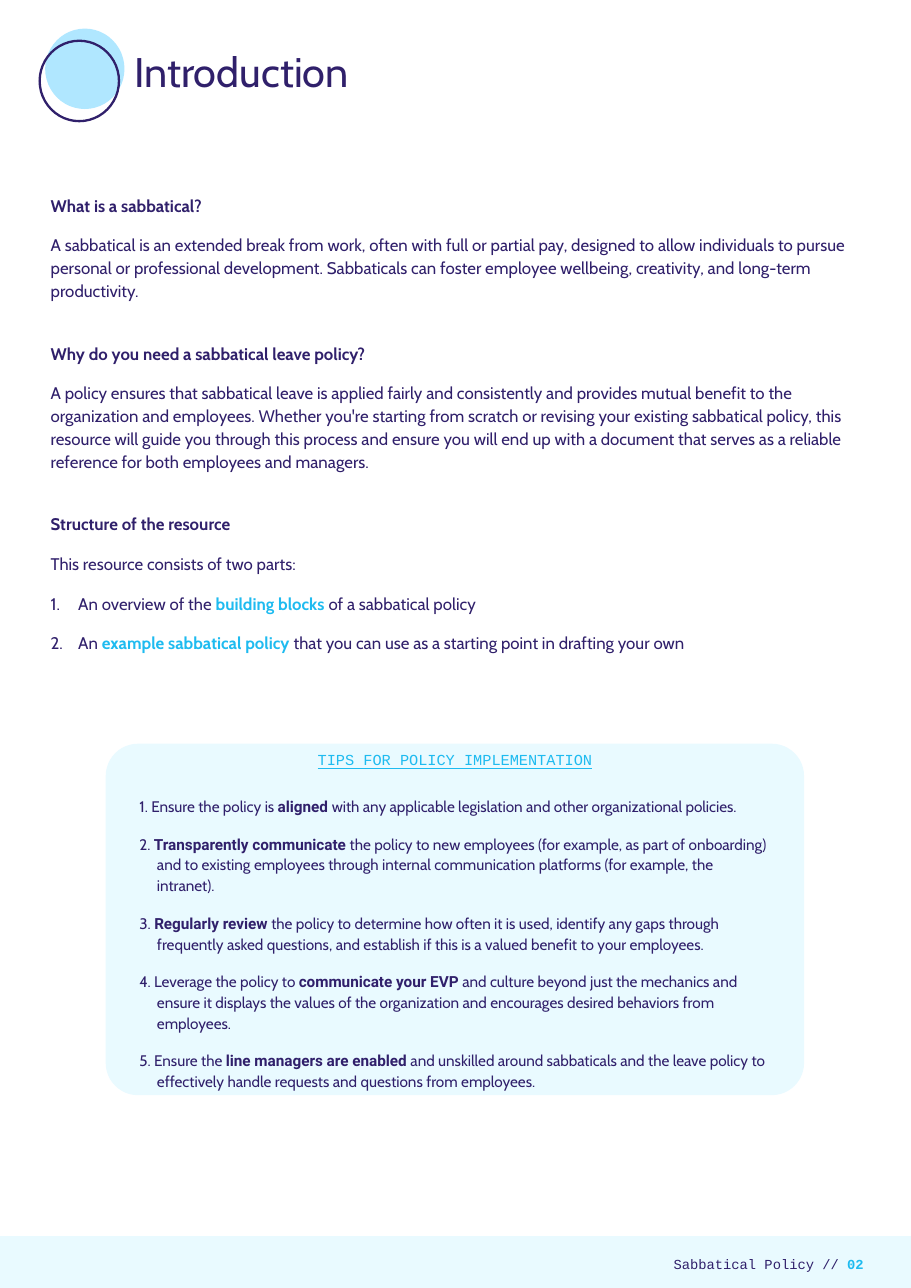
from lxml.etree import SubElement
from pptx import Presentation
from pptx.dml.color import RGBColor
from pptx.enum.shapes import MSO_SHAPE as Shape
from pptx.enum.text import MSO_ANCHOR as Anchor, MSO_AUTO_SIZE as AutoSize, PP_ALIGN as Align
from pptx.oxml.ns import qn
from pptx.util import Inches, Pt

NAVY, CYAN, SKY, PALE = "30206B", "1EBBF0", "B0E7FF", "E9FAFF"
SANS, MONO, STRONG = "Cabin", "Courier New", "Roboto"
PAGE_WIDTH, PAGE_HEIGHT = 8.27, 11.69


def rgb(hex_color):
    return RGBColor.from_string(hex_color)


class Page:
    def __init__(self, slide):
        self.slide = slide

    def shape(self, kind, box, fill=None, line=None):
        shape = self.slide.shapes.add_shape(kind, *map(Inches, box))
        shape.shadow.inherit = False
        if fill:
            shape.fill.solid()
            shape.fill.fore_color.rgb = rgb(fill)
        else:
            shape.fill.background()
        if line:
            shape.line.color.rgb = rgb(line)
            shape.line.width = Pt(1.5)
        else:
            shape.line.fill.background()
        return shape

    def textbox(self, box, anchor):
        return self.frame(self.slide.shapes.add_textbox(*map(Inches, box)), anchor=anchor)

    def placeholder(self, index, box):
        holder = self.slide.placeholders[index]
        holder.left, holder.top, holder.width, holder.height = map(Inches, box)
        return self.frame(holder)

    def frame(self, shape, inset=0, anchor=Anchor.TOP):
        """Prepare the text frame of a shape and return it."""
        frame = shape.text_frame
        frame.word_wrap = True
        frame.auto_size = AutoSize.NONE
        frame.vertical_anchor = anchor
        frame.margin_left = frame.margin_right = Inches(inset)
        frame.margin_top = frame.margin_bottom = Inches(inset)
        return frame

    def paragraph(self, frame, *texts, size=11, font=SANS, color=NAVY, bold=False,
                  underline=False, strong_font=None, strong_color=None, align=Align.LEFT,
                  spacing=1.13, before=0, after=0, hanging=0, numbered=False):
        """Add a paragraph whose every second text is emphasised."""
        is_first = not frame.paragraphs[0].runs
        paragraph = frame.paragraphs[0] if is_first else frame.add_paragraph()
        paragraph.alignment = align
        paragraph.line_spacing = spacing
        paragraph.space_before, paragraph.space_after = Pt(before), Pt(after)
        props = paragraph._p.get_or_add_pPr()
        props.set("marL", str(Inches(hanging)))
        props.set("indent", str(-Inches(hanging)))
        if numbered:
            bullet_color = SubElement(props, qn("a:buClr"))
            SubElement(bullet_color, qn("a:srgbClr"), val=color)
            SubElement(props, qn("a:buAutoNum"), type="arabicPeriod")
        else:
            SubElement(props, qn("a:buNone"))
        for position, text in enumerate(texts):
            strong = position % 2 == 1
            run = paragraph.add_run()
            run.text = text
            run.font.size = Pt(size)
            run.font.name = strong_font if strong and strong_font else font
            run.font.color.rgb = rgb(strong_color if strong and strong_color else color)
            run.font.bold = bold or strong
            run.font.underline = underline


SECTIONS = [
    ("What is a sabbatical?",
     "A sabbatical is an extended break from work, often with full or partial pay, designed to "
     "allow individuals to pursue personal or professional development. Sabbaticals can foster "
     "employee wellbeing, creativity, and long-term productivity."),
    ("Why do you need a sabbatical leave policy?",
     "A policy ensures that sabbatical leave is applied fairly and consistently and provides "
     "mutual benefit to the organization and employees. Whether you're starting from scratch or "
     "revising your existing sabbatical policy, this resource will guide you through this process "
     "and ensure you will end up with a document that serves as a reliable reference for both "
     "employees and managers."),
    ("Structure of the resource", "This resource consists of two parts:"),
]
PARTS = [
    ("An overview of the ", "building blocks ", "of a sabbatical policy"),
    ("An ", "example sabbatical policy ",
     "that you can use as a starting point in drafting your own"),
]
TIPS = [
    ("Ensure the policy is ", "aligned ",
     "with any applicable legislation and other organizational policies."),
    ("", "Transparently communicate ",
     "the policy to new employees (for example, as part of onboarding) and to existing employees "
     "through internal communication platforms (for example, the intranet)."),
    ("", "Regularly review ",
     "the policy to determine how often it is used, identify any gaps through frequently asked "
     "questions, and establish if this is a valued benefit to your employees."),
    ("Leverage the policy to ", "communicate your EVP ",
     "and culture beyond just the mechanics and ensure it displays the values of the organization "
     "and encourages desired behaviors from employees."),
    ("Ensure the ", "line managers are enabled ",
     "and unskilled around sabbaticals and the leave policy to effectively handle requests and "
     "questions from employees."),
]


def main():
    deck = Presentation()
    deck.slide_width, deck.slide_height = Inches(PAGE_WIDTH), Inches(PAGE_HEIGHT)
    page = Page(deck.slides.add_slide(deck.slide_layouts[1]))

    page.shape(Shape.RECTANGLE, (0, 11.22, PAGE_WIDTH, 0.47), fill=PALE)
    page.shape(Shape.OVAL, (0.41, 0.26, 0.72, 0.73), fill=SKY)
    page.shape(Shape.OVAL, (0.36, 0.37, 0.72, 0.73), line=NAVY)

    title = page.placeholder(0, (1.22, 0.47, 6.24, 0.64))
    page.paragraph(title, "Introduction", size=27, spacing=0.9)

    body = page.placeholder(1, (0.46, 1.75, 7.38, 3.39))
    for number, (heading, explanation) in enumerate(SECTIONS):
        page.paragraph(body, heading, bold=True, before=15 if number else 0, after=11)
        page.paragraph(body, explanation, after=11)
    for part in PARTS:
        page.paragraph(body, *part, strong_color=CYAN, after=11, hanging=0.25, numbered=True)

    footer = page.textbox((0.46, 11.34, 7.38, 0.24), Anchor.MIDDLE)
    page.paragraph(footer, "Sabbatical Policy // ", "02", size=9, font=MONO,
                   strong_color=CYAN, align=Align.RIGHT, spacing=1.14)

    panel = page.shape(Shape.ROUNDED_RECTANGLE, (0.96, 6.75, 6.34, 3.19), fill=PALE)
    panel.adjustments[0] = 0.092
    tips = page.frame(panel, inset=0.22, anchor=Anchor.MIDDLE)
    page.paragraph(tips, "TIPS FOR POLICY IMPLEMENTATION", size=10, font=MONO, color=CYAN,
                   underline=True, align=Align.CENTER, after=6)
    for number, (lead, action, detail) in enumerate(TIPS, start=1):
        page.paragraph(tips, f"{number}. {lead}", action, detail, size=10,
                       strong_font=STRONG, before=11, hanging=0.16)

    deck.save("out.pptx")


if __name__ == "__main__":
    main()
